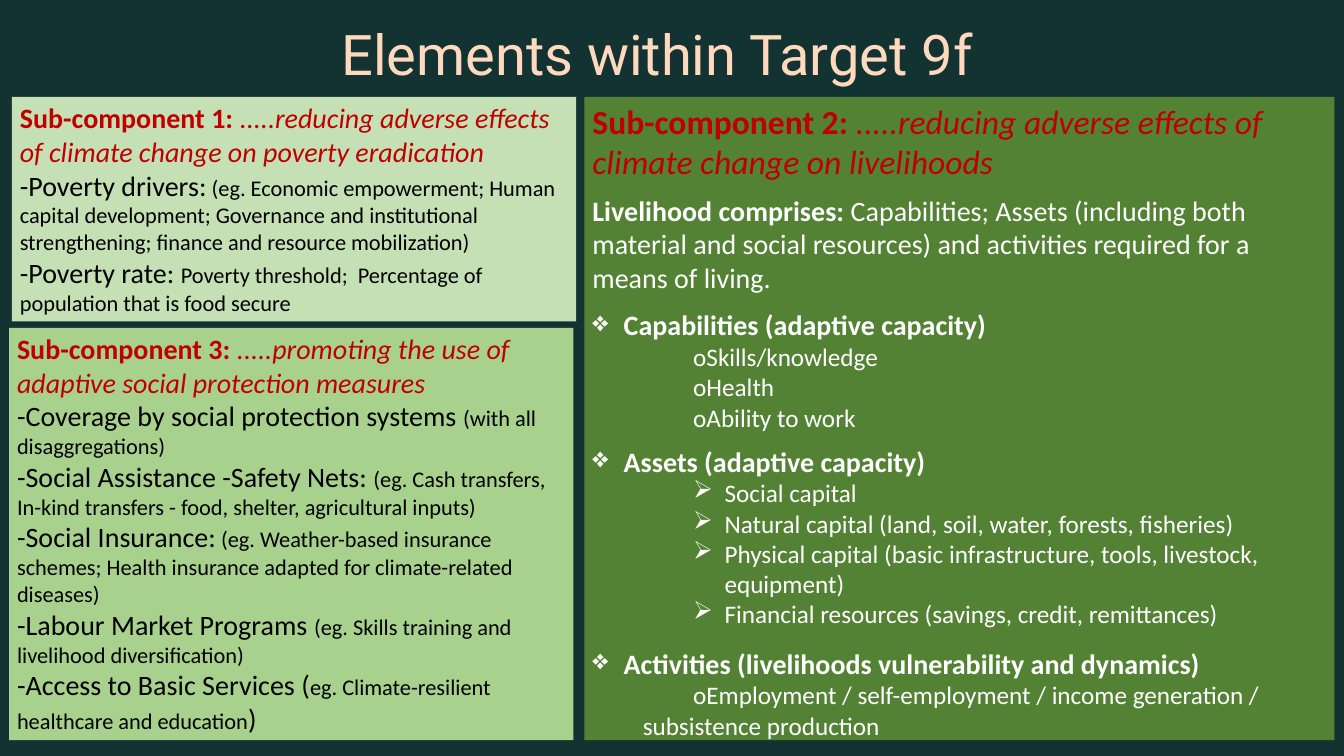
"""Build the slide "Elements within Target 9f" with its three sub-component panels."""
from lxml import etree
from pptx import Presentation
from pptx.dml.color import RGBColor
from pptx.enum.shapes import MSO_SHAPE
from pptx.enum.text import MSO_ANCHOR, PP_ALIGN
from pptx.oxml.ns import qn
from pptx.util import Cm, Pt

RECT = MSO_SHAPE.RECTANGLE
TOP = MSO_ANCHOR.TOP
LEFT, CENTER = PP_ALIGN.LEFT, PP_ALIGN.CENTER

COLORS = {
    "background": "123332", "title": "FFD9BE", "heading": "C00000",
    "black": "000000", "white": "FFFFFF",
    "poverty": "C5E0B4", "protection": "A9D18E", "livelihoods": "548235",
}

STYLES = {
    "title": {"name": "Roboto", "size": 40, "color": "title"},
    "head": {"size": 20, "color": "heading", "bold": True},
    "quote": {"size": 20, "color": "heading", "italic": True},
    "big head": {"size": 24, "color": "heading", "bold": True},
    "big quote": {"size": 24, "color": "heading", "italic": True},
    "item": {"size": 20, "color": "black"},
    "detail": {"size": 16, "color": "black"},
    "lead": {"size": 20, "color": "white", "bold": True},
    "body": {"size": 20, "color": "white"},
    "point": {"size": 18, "color": "white"},
}

LAYOUTS = {
    "plain": {"left": 0, "indent": 0, "bullet": None},
    "topic": {"left": 0.79, "indent": -0.79, "bullet": "❖"},
    "skill": {"left": 2.54, "indent": 0, "bullet": None},
    "asset": {"left": 3.33, "indent": -0.79, "bullet": "➢"},
    "activity": {"left": 1.27, "indent": 1.27, "bullet": None},
}

PANELS = [
    ("poverty", (0.3, 2.44, 14.22, 5.66), [
        ("plain", 0, [("Sub-component 1: ", "head"),
                      (".....reducing adverse effects of climate change on poverty eradication", "quote")]),
        ("plain", 0, [("-Poverty drivers:", "item"),
                      (" (eg. Economic empowerment; Human capital development; Governance and "
                       "institutional strengthening; finance and resource mobilization)", "detail")]),
        ("plain", 0, [("-Poverty rate: ", "item"),
                      ("Poverty threshold;  Percentage of population that is food secure", "detail")]),
    ]),
    ("protection", (0.23, 8.26, 14.22, 10.39), [
        ("plain", 0, [("Sub-component 3: ", "head"),
                      (".....promoting the use of adaptive social protection measures", "quote")]),
        ("plain", 0, [("-Coverage by social protection systems ", "item"),
                      ("(with all disaggregations)", "detail")]),
        ("plain", 0, [("-Social Assistance -Safety Nets: ", "item"),
                      ("(eg. Cash transfers, In-kind transfers - food, shelter, agricultural inputs)", "detail")]),
        ("plain", 0, [("-Social Insurance:", "item"),
                      (" (eg. Weather-based insurance schemes; Health insurance adapted for "
                       "climate-related diseases)", "detail")]),
        ("plain", 0, [("-Labour Market Programs ", "item"),
                      ("(eg. Skills training and livelihood diversification)", "detail")]),
        ("plain", 0, [("-Access to Basic Services (", "item"),
                      ("eg. Climate-resilient healthcare and education", "detail"), (")", "item")]),
    ]),
    ("livelihoods", (14.73, 2.44, 18.9, 16.21), [
        ("plain", 0, [("Sub-component 2: ", "big head"),
                      (".....reducing adverse effects of climate change on livelihoods", "big quote")]),
        ("plain", 8.5, [("Livelihood comprises: ", "lead"),
                        ("Capabilities; Assets (including both material and social resources) and "
                         "activities required for a means of living.", "body")]),
        ("topic", 9.8, [("Capabilities (adaptive capacity)", "lead")]),
        ("skill", 0, [("oSkills/knowledge", "point")]),
        ("skill", 0, [("oHealth", "point")]),
        ("skill", 0, [("oAbility to work", "point")]),
        ("topic", 8.5, [("Assets (adaptive capacity)", "lead")]),
        ("asset", 0, [("Social capital", "point")]),
        ("asset", 0, [("Natural capital (land, soil, water, forests, fisheries)", "point")]),
        ("asset", 0, [("Physical capital (basic infrastructure, tools, livestock, equipment)", "point")]),
        ("asset", 0, [("Financial resources (savings, credit, remittances)", "point")]),
        ("topic", 12.2, [("Activities (livelihoods vulnerability and dynamics)", "lead")]),
        ("activity", 0, [("oEmployment / self-employment / income generation / subsistence production",
                          "point")]),
    ]),
]


def add_run(p, text, style):
    """Append a run formatted with the named style."""
    r = p.add_run()
    r.text = text
    font = {"name": "Calibri", "bold": False, "italic": False, **STYLES[style]}
    r.font.color.rgb = RGBColor.from_string(COLORS[font.pop("color")])
    font["size"] = Pt(font["size"])
    for attr, value in font.items():
        setattr(r.font, attr, value)


def set_frame(tf, wrap, side, edge):
    """Set wrapping, anchor and margins of a text frame."""
    frame = {"word_wrap": wrap, "vertical_anchor": TOP,
             "margin_left": Cm(side), "margin_right": Cm(side),
             "margin_top": Cm(edge), "margin_bottom": Cm(edge)}
    for attr, value in frame.items():
        setattr(tf, attr, value)


prs = Presentation()
prs.slide_width, prs.slide_height = Cm(33.87), Cm(19.05)
s = prs.slides.add_slide(prs.slide_layouts[6])
s.background.fill.solid()
s.background.fill.fore_color.rgb = RGBColor.from_string(COLORS["background"])

title = s.shapes.add_textbox(Cm(0.61), Cm(0.25), Cm(31.9), Cm(1.63))
set_frame(title.text_frame, False, 0, 0)
p = title.text_frame.paragraphs[0]
p.alignment, p.line_spacing = CENTER, Pt(55)
add_run(p, "Elements within Target 9f", "title")

for fill, box, paragraphs in PANELS:
    sp = s.shapes.add_shape(RECT, *[Cm(v) for v in box])
    sp.shadow.inherit = False
    sp.fill.solid()
    sp.fill.fore_color.rgb = RGBColor.from_string(COLORS[fill])
    sp.line.fill.background()
    tf = sp.text_frame
    set_frame(tf, True, 0.2, 0.1)
    for i, (layout, before, runs) in enumerate(paragraphs):
        p = tf.add_paragraph() if i else tf.paragraphs[0]
        p.alignment, p.space_before = LEFT, Pt(before)
        form = LAYOUTS[layout]
        pPr = p._p.get_or_add_pPr()
        pPr.set("marL", str(Cm(form["left"])))
        pPr.set("indent", str(Cm(form["indent"])))
        if form["bullet"]:
            etree.SubElement(pPr, qn("a:buChar")).set("char", form["bullet"])
        for text, style in runs:
            add_run(p, text, style)

prs.save("out.pptx")
